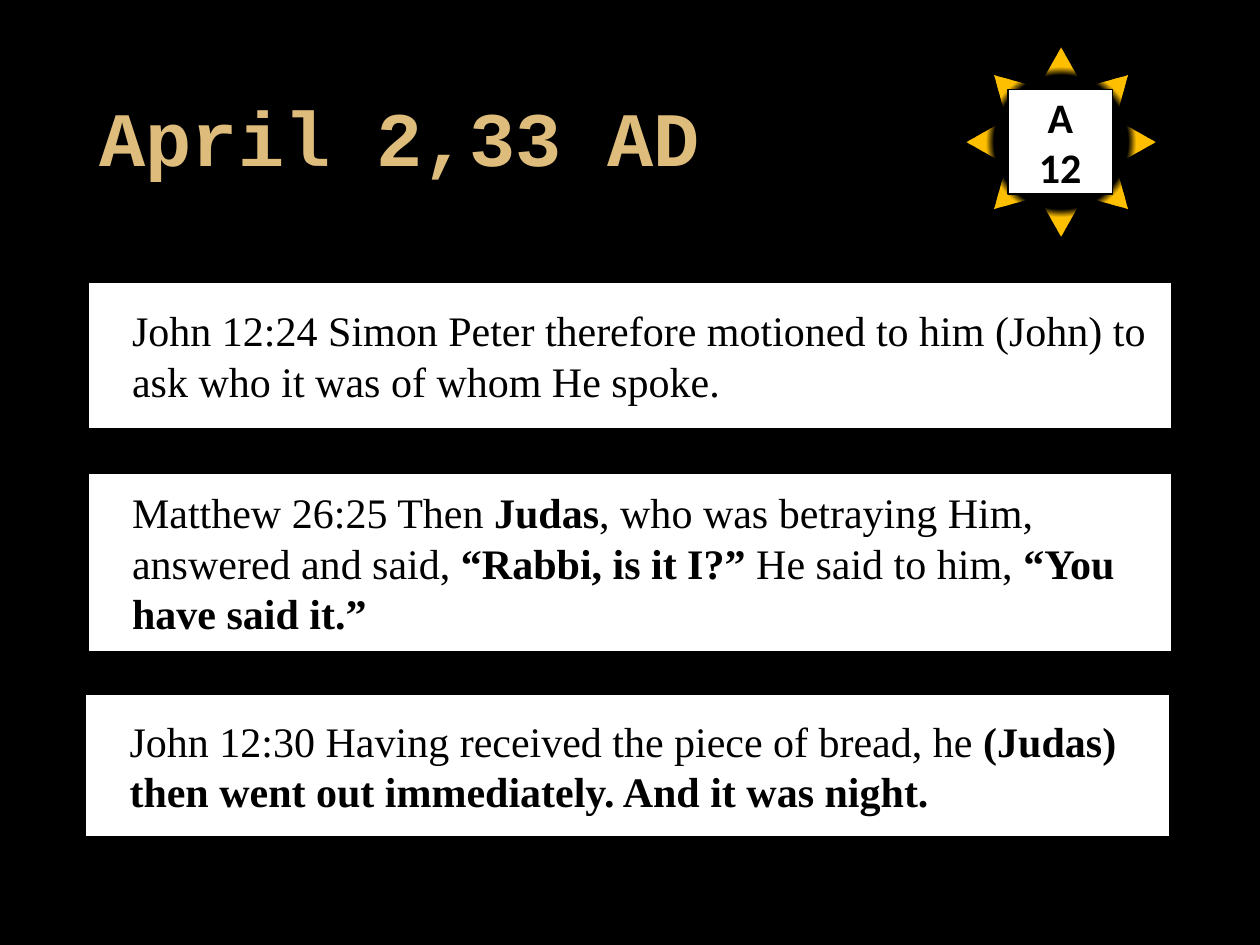
from dataclasses import dataclass

from lxml import etree
from pptx import Presentation
from pptx.dml.color import RGBColor
from pptx.enum.shapes import MSO_SHAPE as SHAPE
from pptx.enum.text import MSO_ANCHOR as ANCHOR, PP_ALIGN as ALIGN
from pptx.oxml import parse_xml
from pptx.oxml.ns import nsdecls
from pptx.util import Inches, Pt


@dataclass(frozen=True)
class Theme:
    black: str = "000000"
    white: str = "FFFFFF"
    gold: str = "DEBD7C"
    yellow: str = "FFFF00"
    amber: str = "FFC000"
    title_size: int = 44
    text_size: int = 24
    title_font: str = "Courier New"
    verse_font: str = "Times New Roman"
    badge_font: str = "Calibri"


T = Theme()


def add_run(p, text, font, size, color, bold):
    r = p.add_run()
    r.text = text
    r.font.name = font
    r.font.size = Pt(size)
    r.font.bold = bold
    r.font.color.rgb = RGBColor.from_string(color)


def add_panel(left, top, width, height, line_width):
    """Add a white rectangle with a black outline."""
    sp = s.shapes.add_shape(SHAPE.RECTANGLE, Inches(left), Inches(top),
                            Inches(width), Inches(height))
    sp.shadow.inherit = False
    sp.fill.solid()
    sp.fill.fore_color.rgb = RGBColor.from_string(T.white)
    sp.line.color.rgb = RGBColor.from_string(T.black)
    sp.line.width = Pt(line_width)
    sp.text_frame.word_wrap = True
    sp.text_frame.vertical_anchor = ANCHOR.MIDDLE
    return sp


prs = Presentation()
prs.slide_width, prs.slide_height = Inches(10), Inches(7.5)
s = prs.slides.add_slide(prs.slide_layouts.get_by_name("Title Only"))
s.background.fill.solid()
s.background.fill.fore_color.rgb = RGBColor.from_string(T.black)

# Title
title = s.shapes.title
title.left, title.top = Inches(0.69), Inches(0.4)
title.width, title.height = Inches(8.62), Inches(1.45)
title.text_frame.vertical_anchor = ANCHOR.MIDDLE
p = title.text_frame.paragraphs[0]
p.alignment = ALIGN.LEFT
p.line_spacing = 0.9
add_run(p, "April 2,33 AD", T.title_font, T.title_size, T.gold, True)

# Verses: left, top, height and (text, bold) runs
verses = [
    (0.69, 2.23, 1.18, [
        ("John 12:24 Simon Peter therefore motioned to him (John) to ask "
         "who it was of whom He spoke.", False)]),
    (0.69, 3.75, 1.43, [
        ("Matthew 26:25 Then ", False),
        ("Judas", True),
        (", who was betraying Him, answered and said, ", False),
        ("“Rabbi, is it I?” ", True),
        ("He said to him, ", False),
        ("“You have said it.”", True)]),
    (0.67, 5.5, 1.15, [
        ("John 12:30 Having received the piece of bread, he ", False),
        ("(Judas) then went out immediately. And it was night.", True)]),
]
for left, top, height, runs in verses:
    p = add_panel(left, top, 8.62, height, 2).text_frame.paragraphs[0]
    p.alignment = ALIGN.LEFT
    pPr = p._p.get_or_add_pPr()
    pPr.set("marL", str(Inches(0.26)))
    pPr.set("indent", "0")
    for text, bold in runs:
        add_run(p, text, T.verse_font, T.text_size, T.black, bold)

# Sun whose gradient is clear in the middle and solid at the rays
sun = s.shapes.add_shape(SHAPE.SUN, Inches(7.67), Inches(0.38),
                         Inches(1.5), Inches(1.5))
sun.adjustments[0] = 0.188
sun.shadow.inherit = False
sun.line.fill.background()
sun.fill.background()
grad = parse_xml(f'<a:gradFill {nsdecls("a")} rotWithShape="1"><a:gsLst/>'
                 '<a:path path="circle"><a:fillToRect l="50000" t="50000" '
                 'r="50000" b="50000"/></a:path></a:gradFill>')
ns = "{http://schemas.openxmlformats.org/drawingml/2006/main}"
for pos, color, alpha in [(0, T.yellow, 0), (50, T.amber, 0), (56, T.amber, 100)]:
    stop = etree.SubElement(grad[0], ns + "gs", pos=str(pos * 1000))
    clr = etree.SubElement(stop, ns + "srgbClr", val=color)
    etree.SubElement(clr, ns + "alpha", val=str(alpha * 1000))
spPr = sun._element.spPr
spPr.replace(spPr.find(ns + "noFill"), grad)

# Badge on the sun
tf = add_panel(8, 0.71, 0.83, 0.83, 1).text_frame
for i, text in enumerate(["A", "12"]):
    p = tf.add_paragraph() if i else tf.paragraphs[0]
    p.alignment = ALIGN.CENTER
    add_run(p, text, T.badge_font, T.text_size, T.black, True)

prs.save("out.pptx")
